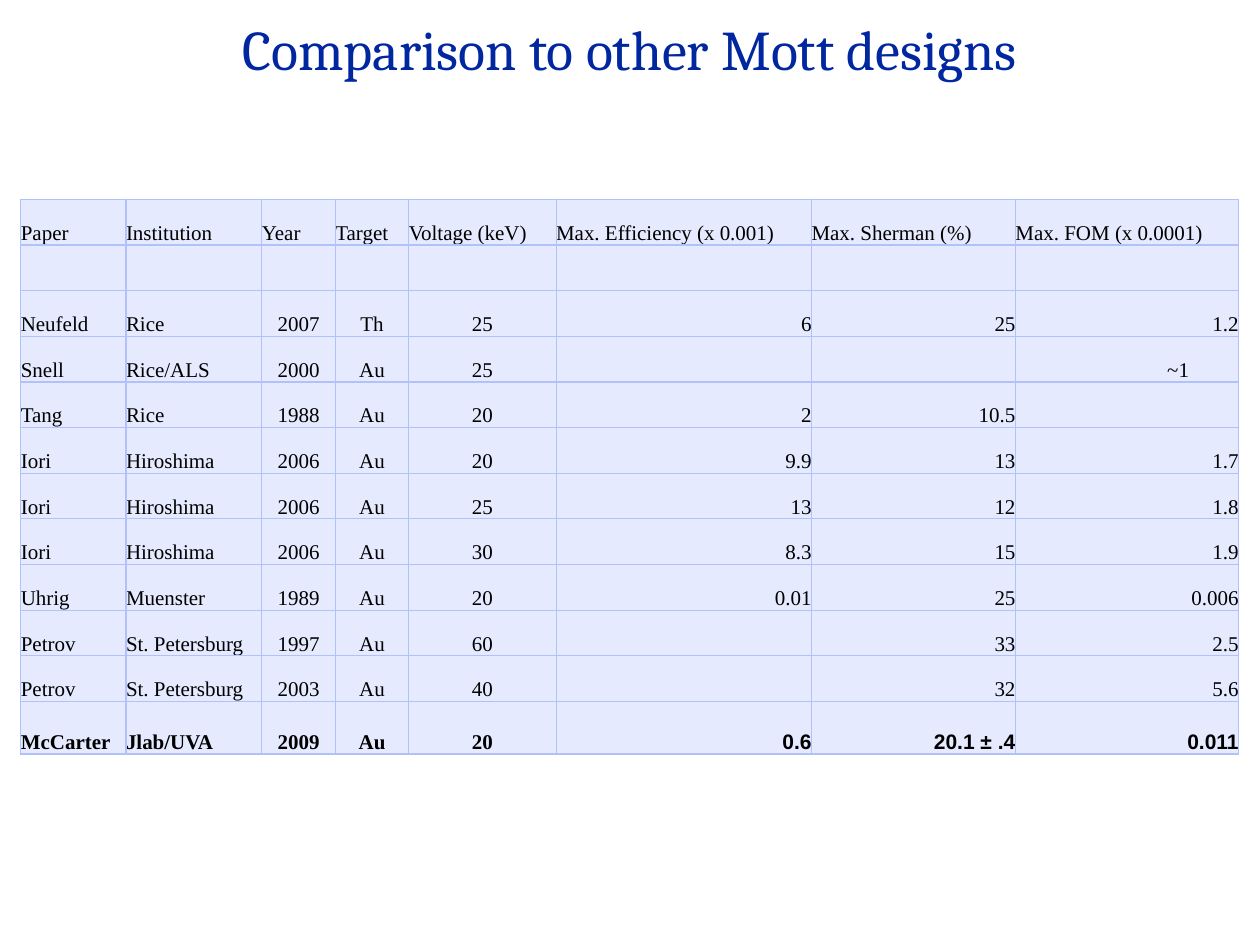
from lxml import etree
from pptx import Presentation, util as u
from pptx.dml import color
from pptx.enum import text
from pptx.oxml import ns

LEFT, MID, RIGHT = text.PP_ALIGN.LEFT, text.PP_ALIGN.CENTER, text.PP_ALIGN.RIGHT
SIDES = ("margin_left", "margin_top", "margin_right", "margin_bottom")

HEAD = ["Paper", "Institution", "Year", "Target", "Voltage (keV)",
        "Max. Efficiency (x 0.001)", "Max. Sherman (%)", "Max. FOM (x 0.0001)"]
DATA = [
    ["Neufeld", "Rice", "2007", "Th", "25", "6", "25", "1.2"],
    ["Snell", "Rice/ALS", "2000", "Au", "25", "", "", "~1"],
    ["Tang", "Rice", "1988", "Au", "20", "2", "10.5", ""],
    ["Iori", "Hiroshima", "2006", "Au", "20", "9.9", "13", "1.7"],
    ["Iori", "Hiroshima", "2006", "Au", "25", "13", "12", "1.8"],
    ["Iori", "Hiroshima", "2006", "Au", "30", "8.3", "15", "1.9"],
    ["Uhrig", "Muenster", "1989", "Au", "20", "0.01", "25", "0.006"],
    ["Petrov", "St. Petersburg", "1997", "Au", "60", "", "33", "2.5"],
    ["Petrov", "St. Petersburg", "2003", "Au", "40", "", "32", "5.6"],
    ["McCarter", "Jlab/UVA", "2009", "Au", "20", "0.6", "20.1 ± .4", "0.011"],
]
ROWS = [HEAD, [""] * len(HEAD)] + DATA
WIDTHS = [2.12, 2.74, 1.48, 1.48, 2.97, 5.15, 4.11, 4.5]
ALIGN = [LEFT] * 2 + [MID] * 3 + [RIGHT] * 3
HIGH, LAST = 0.92, 1.06


def rgb(code):
    return color.RGBColor.from_string(code)


def apply(item, vals):
    for key, val in vals.items():
        setattr(item, key, val)


class Deck:
    ink, blue, fill, edge = "000000", "00279F", "E5EAFE", "B1C1FA"
    serif, sans, head = "Times New Roman", "Arial", "Cambria"

    def __init__(self):
        self.prs = Presentation()
        apply(self.prs, {"slide_width": u.Cm(25.4), "slide_height": u.Cm(19.05)})
        self.slide = self.prs.slides.add_slide(self.prs.slide_layouts[5])

    def label(self, para, words, tint, **font):
        run = para.add_run()
        run.text = words
        apply(run.font, font)
        run.font.color.rgb = rgb(tint)

    def title(self, words):
        box = self.slide.shapes.title
        apply(box, {"left": 0, "top": u.Cm(0.05),
                    "width": u.Cm(25.4), "height": u.Cm(2.06)})
        frame = box.text_frame
        apply(frame, dict(zip(SIDES, map(u.Cm, (0.25, 0.13, 0.25, 0.13)))))
        apply(frame, {"word_wrap": True, "auto_size": text.MSO_AUTO_SIZE.NONE,
                      "vertical_anchor": text.MSO_ANCHOR.MIDDLE})
        para = frame.paragraphs[0]
        apply(para, {"alignment": MID, "line_spacing": 0.85})
        self.label(para, words, self.blue, name=self.head, size=u.Pt(32))

    def border(self, cell):
        props = cell._tc.get_or_add_tcPr()
        for side in ("lnL", "lnR", "lnT", "lnB"):
            line = etree.SubElement(props, ns.qn("a:" + side), w=str(u.Pt(0.75)))
            solid = etree.SubElement(line, ns.qn("a:solidFill"))
            etree.SubElement(solid, ns.qn("a:srgbClr"), val=self.edge)

    def cell(self, cell, words, align, **font):
        apply(cell, dict.fromkeys(SIDES, 0))
        cell.vertical_anchor = text.MSO_ANCHOR.BOTTOM
        self.border(cell)
        cell.fill.solid()
        cell.fill.fore_color.rgb = rgb(self.fill)
        para = cell.text_frame.paragraphs[0]
        para.alignment = align
        if words:
            self.label(para, words, self.ink, size=u.Pt(12), **font)
        if words.startswith("~"):
            cell.margin_right = u.Cm(1)

    def table(self, left, top, rows, widths):
        highs = [HIGH] * (len(rows) - 1) + [LAST]
        grid = self.slide.shapes.add_table(
            len(rows), len(widths), u.Cm(left), u.Cm(top),
            u.Cm(sum(widths)), u.Cm(sum(highs))).table
        apply(grid, {"first_row": False, "horz_banding": False})
        for col, wide in zip(grid.columns, widths):
            col.width = u.Cm(wide)
        for r, (row, high) in enumerate(zip(rows, highs)):
            grid.rows[r].height = u.Cm(high)
            bold = r == len(rows) - 1
            for c, words in enumerate(row):
                name = self.sans if bold and ALIGN[c] == RIGHT else self.serif
                align = LEFT if r == 0 else ALIGN[c]
                self.cell(grid.cell(r, c), words, align, name=name, bold=bold)


def main():
    deck = Deck()
    deck.title("Comparison to other Mott designs")
    deck.table(0.42, 4.02, ROWS, WIDTHS)
    deck.prs.save("out.pptx")


if __name__ == "__main__":
    main()
